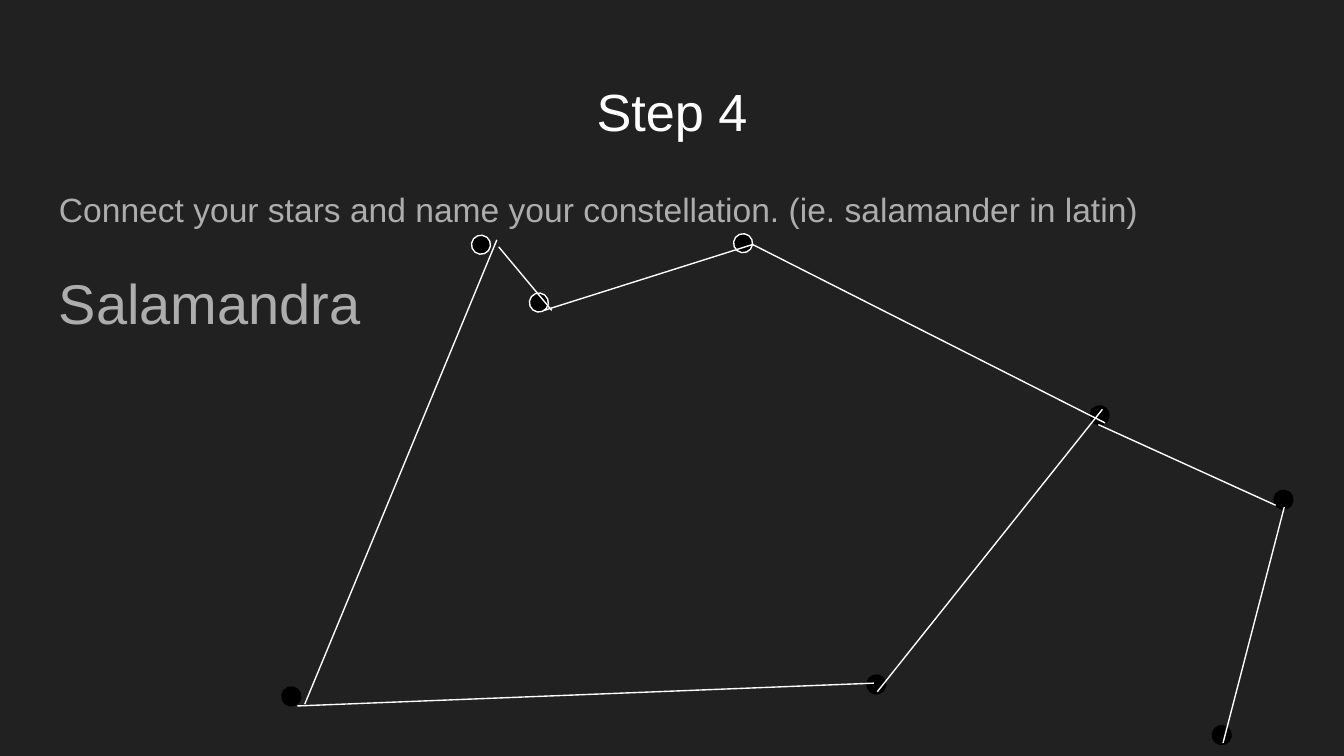
import pptx
import pptx.dml.color
import pptx.enum.shapes
import pptx.enum.text
import pptx.oxml.ns
import pptx.util
from lxml import etree

Pt = pptx.util.Pt
SIZE = 10.2
WHITE, BLACK, GREY, NIGHT = "FFFFFF", "000000", "ADADAD", "212121"

STARS = [
    (252.6, 126, WHITE), (283.6, 157, WHITE), (393, 125.2, WHITE),
    (151, 368, BLACK), (464.4, 361.6, BLACK), (649.4, 388.7, BLACK),
    (584, 217.4, BLACK), (682.5, 262.6, BLACK),
]
LINKS = [
    (266.2, 128.5, 163.3, 377.2), (159.3, 378.2, 468.2, 366),
    (267.2, 132.3, 295.6, 166.3), (291.5, 166.3, 403.2, 131),
    (403.2, 131, 592, 226.6), (470, 370.6, 590.6, 219.3),
    (588.4, 227.5, 683.4, 270.7), (688, 271.7, 655.2, 398),
]


def color(code):
    return pptx.dml.color.RGBColor.from_string(code)


def outline(item, code):
    item.line.color.rgb = color(code)
    item.line.width = Pt(0.75)


def write(slide, box, lines, tint=GREY, align="LEFT", space=1, after=0):
    frame = slide.shapes.add_textbox(*map(Pt, box)).text_frame
    frame.word_wrap = True
    frame.margin_left = frame.margin_right = Pt(7.2)
    frame.margin_top = frame.margin_bottom = Pt(7.2)
    for i, (text, size) in enumerate(lines):
        para = frame.add_paragraph() if i else frame.paragraphs[0]
        para.alignment = getattr(pptx.enum.text.PP_ALIGN, align)
        para.line_spacing = space
        para.space_after = Pt(after)
        run = para.add_run()
        run.text = text
        run.font.name = "Arial"
        run.font.size = Pt(size)
        run.font.color.rgb = color(tint)


def star(slide, x, y, edge):
    oval = pptx.enum.shapes.MSO_SHAPE.OVAL
    dot = slide.shapes.add_shape(
        oval, Pt(x), Pt(y), Pt(SIZE), Pt(SIZE))
    dot.rotation = 8.4
    dot.shadow.inherit = False
    dot.fill.solid()
    dot.fill.fore_color.rgb = color(BLACK)
    outline(dot, edge)


def link(slide, *ends):
    kind = pptx.enum.shapes.MSO_CONNECTOR.STRAIGHT
    line = slide.shapes.add_connector(kind, *map(Pt, ends))
    outline(line, WHITE)
    props = line._element.spPr
    etree.SubElement(props, pptx.oxml.ns.qn("a:effectLst"))


def main():
    deck = pptx.Presentation()
    deck.slide_width, deck.slide_height = Pt(720), Pt(405)
    slide = deck.slides.add_slide(deck.slide_layouts[6])
    slide.background.fill.solid()
    slide.background.fill.fore_color.rgb = color(NIGHT)

    write(slide, (24.5, 35, 671, 45), [("Step 4", 28)],
          tint=WHITE, align="CENTER")
    write(slide, (24.5, 90.7, 671, 269), [
        ("Connect your stars and name your constellation. "
         "(ie. salamander in latin)", 18),
        ("Salamandra", 30),
    ], space=1.15, after=16)
    for spot in STARS:
        star(slide, *spot)
    for ends in LINKS:
        link(slide, *ends)
    deck.save("out.pptx")


if __name__ == "__main__":
    main()
